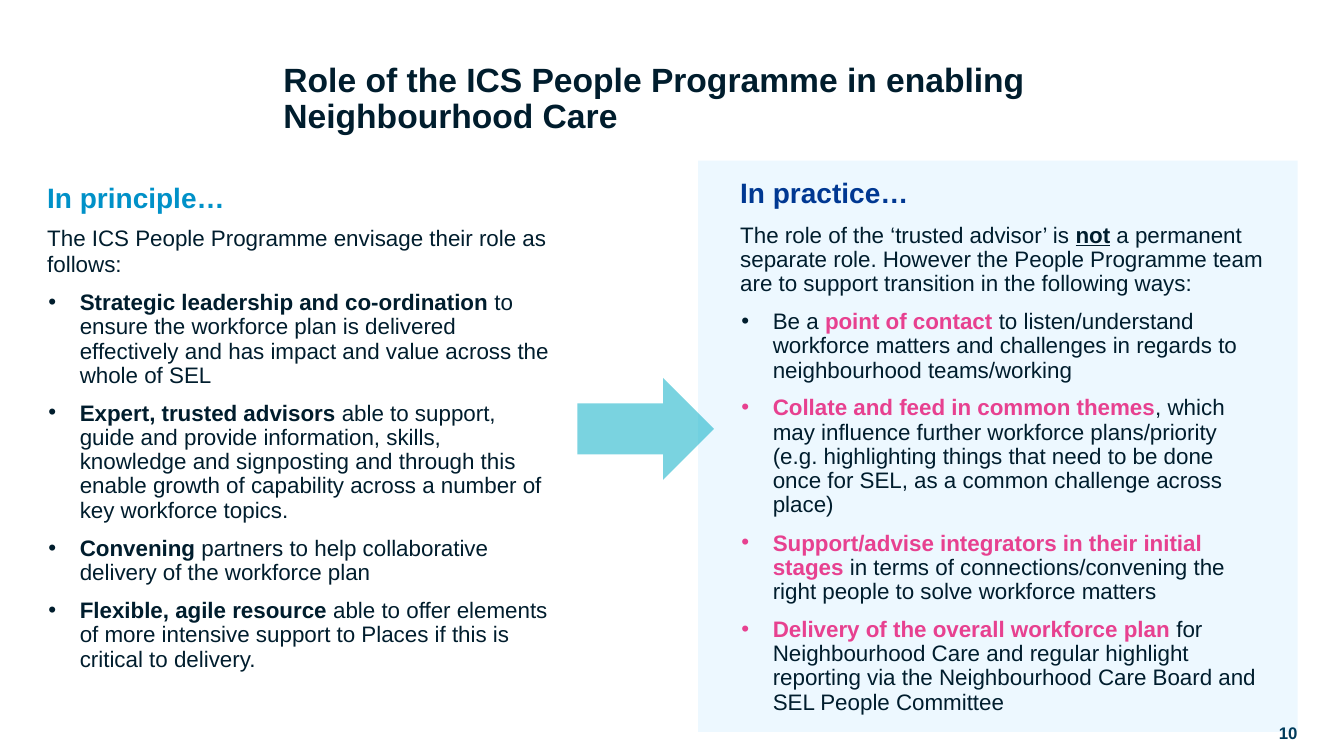
"""Build the slide on the role of the ICS People Programme."""
from dataclasses import dataclass
from typing import NamedTuple

from lxml import etree
from pptx import Presentation
from pptx import util as u
from pptx.dml.color import RGBColor
from pptx.enum import shapes, text
from pptx.oxml import ns

PX = 9525
FONT = "Arial"
INK = RGBColor(0x00, 0x1D, 0x2D)
SKY = RGBColor(0x00, 0x91, 0xC8)
NAVY = RGBColor(0x00, 0x38, 0x92)
PINK = RGBColor(0xE7, 0x41, 0x90)
STEEL = RGBColor(0x00, 0x3B, 0x5B)
PALE = RGBColor(0xD1, 0xED, 0xFF)
TEAL = RGBColor(0x00, 0xAC, 0xC5)


class Box(NamedTuple):
    left: int
    top: int
    width: int
    height: int


class Span(NamedTuple):
    words: str
    bold: bool = False
    color: RGBColor | None = None
    under: bool = False


@dataclass
class Para:
    spans: list[Span]
    gap: float = 0
    line: float | None = 17.3
    size: int = 16
    color: RGBColor = INK
    bold: bool | None = None
    bullet: bool = False
    left: int = 1


@dataclass
class Block:
    box: Box
    paras: list[Para]
    inset: int = 0


@dataclass
class Figure:
    kind: shapes.MSO_SHAPE
    box: Box
    color: RGBColor
    alpha: int


def head(words: str, color: RGBColor) -> Para:
    return Para([Span(words)], line=None, size=20, color=color, bold=True)


def item(gap: float, *spans: Span) -> Para:
    return Para(list(spans), gap, bullet=True, left=32)


def key(words: str) -> Span:
    return Span(words, True)


def pink(words: str) -> Span:
    return Span(words, True, PINK)


TITLE = Block(Box(269, 54, 708, 76), [
    Para([Span("Role of the ICS People Programme in enabling Neighbourhood Care")],
         line=25.9, size=24, bold=True)], 6)

THEORY = Block(Box(44, 157, 482, 484), [
    head("In principle…", SKY),
    Para([Span("The ICS People Programme envisage their role as follows:")], 8.2, 18.2),
    item(10.2, key("Strategic leadership and co-ordination "),
         Span("to ensure the workforce plan is delivered effectively and has "
              "impact and value across the whole of SEL")),
    item(9.8, key("Expert, trusted advisors "),
         Span("able to support, guide and provide information, skills, knowledge "
              "and signposting and through this enable growth of capability "
              "across a number of key workforce topics.")),
    item(10.2, key("Convening "),
         Span("partners to help collaborative delivery of the workforce plan")),
    item(9.9, key("Flexible, agile resource "),
         Span("able to offer elements of more intensive support to Places if "
              "this is critical to delivery.")),
], 15)

ACTION = Block(Box(704, 152, 500, 530), [
    head("In practice…", NAVY),
    Para([Span("The role of the ‘trusted advisor’ is "), Span("not", True, under=True),
          Span(" a permanent separate role. However the People Programme team are "
               "to support transition in the following ways:")], 10.3),
    item(9.9, Span("Be a "), pink("point of contact "),
         Span("to listen/understand workforce matters and challenges in regards "
              "to neighbourhood teams/working")),
    item(9.8, pink("Collate and feed in common themes"),
         Span(", which may influence further workforce plans/priority (e.g. "
              "highlighting things that need to be done once for SEL, as a "
              "common challenge across place)")),
    item(10.2, pink("Support/advise integrators in their initial stages "),
         Span("in terms of connections/convening the right people to solve "
              "workforce matters")),
    item(9.7, pink("Delivery of the overall workforce plan "),
         Span("for Neighbourhood Care and regular highlight reporting via the "
              "Neighbourhood Care Board and SEL People Committee")),
], 15)

NUMBER = Block(Box(1213, 689, 27, 20), [
    Para([Span("10")], line=14.2, size=12, color=STEEL, bold=True, left=5)])

PANEL = Figure(shapes.MSO_SHAPE.RECTANGLE, Box(665, 153, 571, 544), PALE, 39)
ARROW = Figure(shapes.MSO_SHAPE.RIGHT_ARROW, Box(550, 360, 130, 97), TEAL, 52)


def place(shape, box: Box) -> None:
    shape.left, shape.top, shape.width, shape.height = (n * PX for n in box)


def draw(tree, fig: Figure):
    shape = tree.add_shape(fig.kind, *(n * PX for n in fig.box))
    shape.shadow.inherit = False
    shape.fill.solid()
    shape.fill.fore_color.rgb = fig.color
    shape.line.fill.background()
    tint = shape.fill._xPr.find(".//" + ns.qn("a:srgbClr"))
    etree.SubElement(tint, ns.qn("a:alpha"), val=str(fig.alpha * 1000))
    return shape


def write(par, spec_: Para) -> None:
    par.alignment = text.PP_ALIGN.LEFT
    par.space_before = u.Pt(spec_.gap)
    if spec_.line:
        par.line_spacing = u.Pt(spec_.line)
    props = par._p.get_or_add_pPr()
    props.set("marL", str(spec_.left * PX))
    props.set("indent", str(-30 * PX if spec_.bullet else 0))
    if spec_.bullet:
        etree.SubElement(props, ns.qn("a:buFont"), typeface=FONT)
        etree.SubElement(props, ns.qn("a:buChar"), char="•")
    else:
        etree.SubElement(props, ns.qn("a:buNone"))
    font = par.font
    font.name, font.size, font.bold = FONT, u.Pt(spec_.size), spec_.bold
    font.color.rgb = spec_.color
    for span in spec_.spans:
        run = par.add_run()
        run.text = span.words
        if span.bold:
            run.font.bold = True
        if span.under:
            run.font.underline = True
        if span.color:
            run.font.color.rgb = span.color


def fill(shape, block: Block) -> None:
    place(shape, block.box)
    frame = shape.text_frame
    frame.word_wrap = True
    frame.auto_size = text.MSO_AUTO_SIZE.NONE
    frame.vertical_anchor = text.MSO_ANCHOR.TOP
    frame.margin_left = frame.margin_right = frame.margin_bottom = 0
    frame.margin_top = block.inset * PX
    for num, para in enumerate(block.paras):
        write(frame.add_paragraph() if num else frame.paragraphs[0], para)


def main() -> None:
    deck = Presentation()
    deck.slide_width, deck.slide_height = 1280 * PX, 720 * PX
    slide = deck.slides.add_slide(deck.slide_layouts[3])
    tree = slide.shapes
    panel = draw(tree, PANEL)
    tree.title._element.addprevious(panel._element)
    for shape, block in zip(slide.placeholders, (TITLE, THEORY, ACTION)):
        fill(shape, block)
    draw(tree, ARROW)
    fill(tree.add_textbox(0, 0, PX, PX), NUMBER)
    deck.save("out.pptx")


if __name__ == "__main__":
    main()
